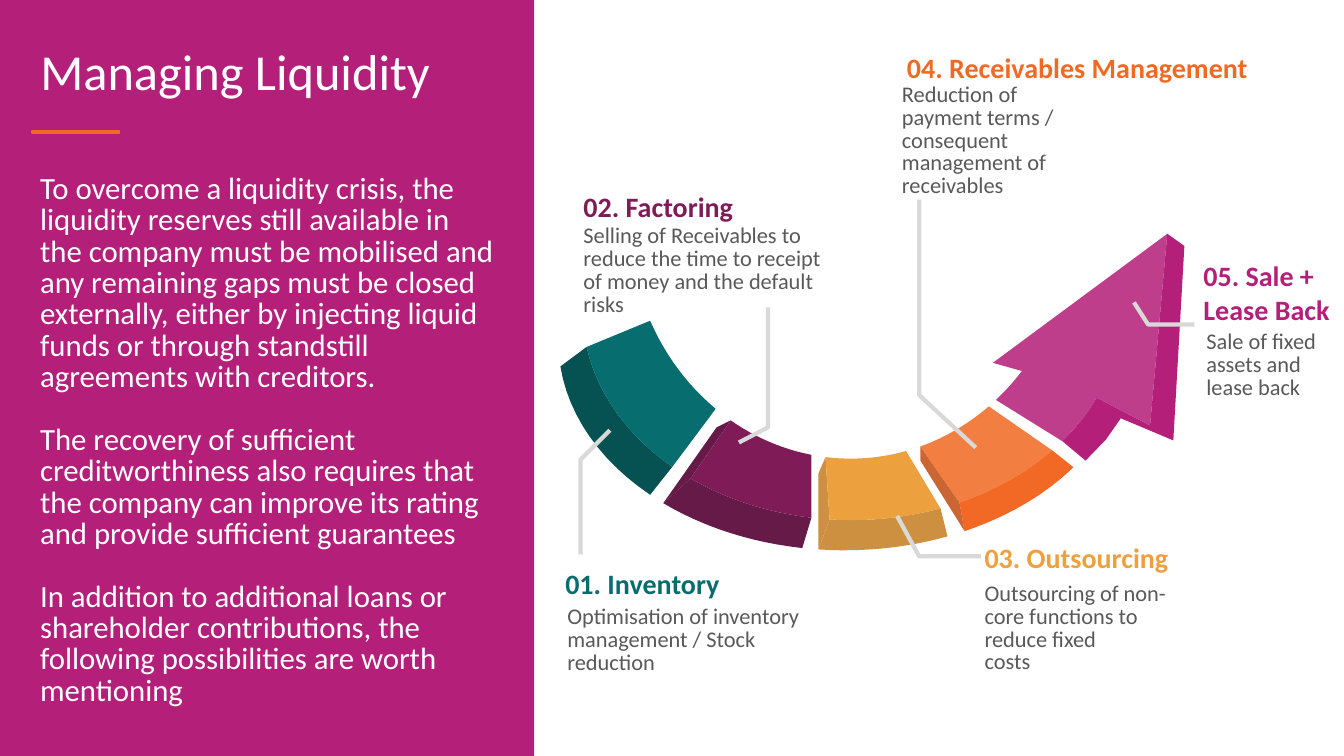
from dataclasses import dataclass
from math import acos, cos, sin

from lxml.etree import SubElement
from pptx import Presentation
from pptx.dml.color import RGBColor
from pptx.enum.shapes import MSO_SHAPE as Shape
from pptx.enum.text import MSO_ANCHOR as Anchor, PP_ALIGN as Align
from pptx.oxml.ns import qn
from pptx.util import Pt

FONT = "Calibri"
MAGENTA, ORANGE, TEAL, PLUM, AMBER = "B41F7A", "F16924", "086D6E", "7F1C58", "EDA13E"
WHITE, GREY, LEADER_GREY = "FFFFFF", "595959", "D9D9D9"

TITLE = "Managing Liquidity"
BODY = [
    "To overcome a liquidity crisis, the liquidity reserves still available in the company must be "
    "mobilised and any remaining gaps must be closed externally, either by injecting liquid funds "
    "or through standstill agreements with creditors.",
    "The recovery of sufficient creditworthiness also requires that the company can improve its "
    "rating and provide sufficient guarantees",
    "In addition to additional loans or shareholder contributions, the following possibilities "
    "are worth mentioning",
]


@dataclass
class Rail:
    """The lower half of an ellipse that the arrow sections follow."""
    middle: float
    bottom: float
    half_width: float
    half_height: float

    def arc(self, start, end, pieces=12):
        """Return points on the rail between two horizontal positions."""
        first, last = (acos((x - self.middle) / self.half_width) for x in (start, end))
        angles = [first + (last - first) * piece / pieces for piece in range(pieces + 1)]
        return [(self.middle + self.half_width * cos(angle),
                 self.bottom - self.half_height * (1 - sin(angle))) for angle in angles]


INNER = Rail(207.7, 160.6, 158.5, 172)
OUTER = Rail(208.4, 204.5, 192.2, 149)
BASE = Rail(203.4, 226.1, 204.5, 148.7)


@dataclass
class Step:
    """The label and leader line of one arrow section."""
    heading: str
    detail: str
    colour: str
    heading_box: tuple
    detail_box: tuple
    leader: list
    wrap_heading: bool = False


@dataclass
class Section:
    """A curved block, cut from the three rails between horizontal positions."""
    colour: str
    opacity: int
    front_colour: str
    end_colour: str
    inner: tuple
    outer: tuple
    base: tuple
    end_corner: tuple = ()

    def faces(self):
        """Return colour, opacity and outline of each visible face."""
        inner, outer, base = INNER.arc(*self.inner), OUTER.arc(*self.outer), BASE.arc(*self.base)
        faces = [(self.front_colour, 100, outer + base[::-1]),
                 (self.colour, self.opacity, inner + outer[::-1])]
        if self.end_corner:
            faces.insert(0, (self.end_colour, 100, [inner[0], self.end_corner, base[0], outer[0]]))
        return faces


STEPS = [
    Step("01. Inventory", "Optimisation of inventory management / Stock reduction", TEAL,
         (14.7, 401, 126, 32), (16.2, 429.8, 180.7, 56),
         [(35.6, 140.4), (14.7, 161.3), (14.7, 229)]),
    Step("02. Factoring",
         "Selling of Receivables to reduce the time to receipt of money and the default risks", PLUM,
         (27.7, 131.8, 122, 32), (27.7, 157.7, 186.5, 72),
         [(127.8, 149.1), (148.6, 138.3), (148.6, 52.6)]),
    Step("03. Outsourcing", "Outsourcing of non-core functions to reduce fixed\vcosts", AMBER,
         (314.2, 382.3, 147, 32), (314.2, 413.3, 157, 72),
         [(240.8, 201.6), (256.6, 230.4), (300.6, 230.4)]),
    Step("04. Receivables Management",
         "Reduction of payment terms / consequent management of receivables", ORANGE,
         (258.8, 32.4, 260, 55), (255.2, 56.9, 150.5, 88.6),
         [(297, 152.7), (256.6, 115.2), (256.6, -24.4)]),
    Step("05. Sale + Lease Back", "Sale of fixed assets and lease back", MAGENTA,
         (470.5, 181.4, 142, 80), (472.6, 233.3, 110, 56),
         [(410, 49), (420.1, 64.8), (453.2, 64.8)], True),
]
SECTIONS = [
    Section(TEAL, 100, "065252", "065252", (64.4, 111.2), (19, 80.2), (0.3, 64.4)),
    Section(PLUM, 100, "651A47", "651A47", (122, 179.6), (93.2, 179.6), (73.8, 173.1), (111.9, 138.3)),
    Section(AMBER, 100, "CD9040", "CD9040", (189.7, 247.3), (192.6, 271.8), (184.6, 276.8),
            (184.6, 171.4)),
    Section(ORANGE, 86, ORANGE, "CB6534", (257.4, 306.3), (285.4, 351.7), (289, 366.8), (257.4, 162)),
]


def head_faces():
    """Return the side and front of the arrowhead."""
    tip, barb = (433.8, 0), (421.5, 137)
    neck = OUTER.arc(358.9, 383.4)
    side = [tip, barb, *neck[::-1], (375.4, 162), (390, 147), (400.6, 131.8), (438.1, 147.6), (446, 8.7)]
    front = [tip, (309.2, 92.2), *INNER.arc(330, 311.4), *neck, barb]
    return [(MAGENTA, 100, side), (MAGENTA, 86, front)]


def rgb(colour):
    """Turn a hex string into a colour."""
    return RGBColor.from_string(colour)


def fill_shape(shape, colour, opacity=100):
    """Give a shape a plain fill without line or shadow."""
    shape.shadow.inherit = False
    shape.fill.solid()
    shape.fill.fore_color.rgb = rgb(colour)
    shape.line.fill.background()
    if opacity < 100:
        for element in shape._element.spPr.iter(qn("a:srgbClr")):
            SubElement(element, qn("a:alpha"), val=str(opacity * 1000))


def format_text(text_frame, size, colour, bold=False, spacing=None, gap=0):
    """Format all paragraphs of a text frame, with a gap between them."""
    for index, paragraph in enumerate(text_frame.paragraphs):
        paragraph.alignment = Align.LEFT
        paragraph.space_before = Pt(gap if index else 0)
        if spacing:
            paragraph.line_spacing = spacing
        for run in paragraph.runs:
            run.font.name, run.font.size, run.font.bold = FONT, Pt(size), bold
            run.font.color.rgb = rgb(colour)


def add_text(slide, box, text, wrap=True, **style):
    """Add a text box."""
    text_frame = slide.shapes.add_textbox(*map(Pt, box)).text_frame
    text_frame.word_wrap = wrap
    text_frame.text = text
    format_text(text_frame, **style)


def add_outline(shapes, left, top, outline, close=True):
    """Draw an outline relative to a corner."""
    points = [(Pt(left + x), Pt(top + y)) for x, y in outline]
    builder = shapes.build_freeform(*points[0], scale=1)
    builder.add_line_segments(points[1:], close=close)
    return builder.convert_to_shape()


def add_panel(slide, left, top, width, height):
    """Add the coloured panel with title, rule and body text."""
    panel = slide.shapes.add_shape(Shape.RECTANGLE, *map(Pt, (left, top, width, height)))
    fill_shape(panel, MAGENTA)
    title = slide.shapes.title
    title.left, title.top, title.width, title.height = map(
        Pt, (left + 21.6, top + 30.2, width - 41, 244))
    title.text_frame.text = TITLE
    title.text_frame.vertical_anchor = Anchor.TOP
    format_text(title.text_frame, 36, WHITE, spacing=0.9)
    panel._element.addnext(title._element)
    add_text(slide, (left + 21.6, top + 121, width - 40.3, 406.8), "\n".join(BODY),
             size=22, colour=WHITE, spacing=Pt(22.4), gap=22.4)
    rule = slide.shapes.add_shape(Shape.RECTANGLE, *map(Pt, (left + 23, top + 93.6, 62.6, 1.4)))
    fill_shape(rule, ORANGE)
    rule.line.color.rgb = rgb(ORANGE)
    rule.line.width = Pt(1)


def add_arrow(slide, left, top):
    """Add the five arrow sections and their leader lines."""
    for faces in [*(section.faces() for section in SECTIONS), head_faces()]:
        group = slide.shapes.add_group_shape()
        for colour, opacity, outline in faces:
            fill_shape(add_outline(group.shapes, left, top, outline), colour, opacity)
    for step in STEPS:
        leader = add_outline(slide.shapes, left, top, step.leader, close=False)
        leader.shadow.inherit = False
        leader.fill.background()
        leader.line.color.rgb = rgb(LEADER_GREY)
        leader.line.width = Pt(3)


def add_diagram(slide, left, top):
    """Add the arrow with its labels."""
    add_arrow(slide, left + 18, top + 167)
    for step in STEPS:
        heading_box, detail_box = ((left + x, top + y, width, height) for x, y, width, height
                                   in (step.heading_box, step.detail_box))
        add_text(slide, detail_box, step.detail, size=16, colour=GREY, spacing=Pt(16.2))
        add_text(slide, heading_box, step.heading, step.wrap_heading,
                 size=20, colour=step.colour, bold=True)


def main():
    """Build and save the slide."""
    presentation = Presentation()
    presentation.slide_width, presentation.slide_height = Pt(960), Pt(540)
    slide = presentation.slides.add_slide(presentation.slide_layouts[5])
    add_panel(slide, 0, 0, 381.6, 540)
    add_diagram(slide, 382, 0)
    presentation.save("out.pptx")


if __name__ == "__main__":
    main()
